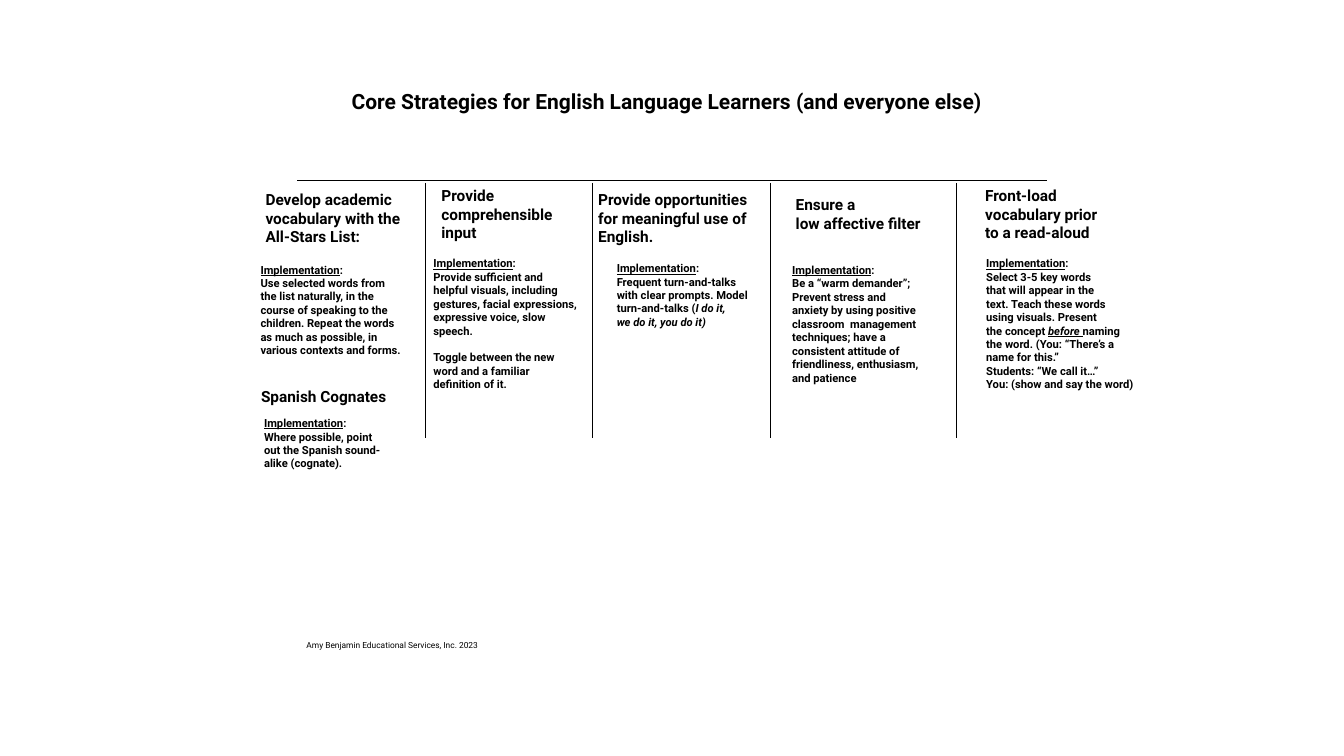
"""Build a one-page overview of core strategies for English language learners."""
from dataclasses import dataclass

from lxml import etree
from pptx import Presentation
from pptx.dml.color import RGBColor
from pptx.enum import shapes, text
from pptx.oxml import ns
from pptx.util import Inches, Pt


@dataclass(frozen=True)
class Theme:
    font: str = "Roboto"
    ink: RGBColor = RGBColor(0, 0, 0)
    title: int = 30
    heading: int = 22
    body: int = 16
    footer: int = 12
    passage_gap: int = 19
    rule: int = 1


theme = Theme()
LEFT, CENTER = text.PP_ALIGN.LEFT, text.PP_ALIGN.CENTER


def fill_box(box, passages, size, bold=True, align=LEFT):
    frame = box.text_frame
    frame.word_wrap = False
    frame.auto_size = text.MSO_AUTO_SIZE.SHAPE_TO_FIT_TEXT
    frame.vertical_anchor = text.MSO_ANCHOR.MIDDLE
    frame.margin_left = frame.margin_right = Inches(0.06)
    frame.margin_top = frame.margin_bottom = Inches(0.06)
    para = frame.paragraphs[0]
    for passage_number, passage in enumerate(passages):
        for line_number, line in enumerate(passage):
            if passage_number or line_number:
                para = frame.add_paragraph()
            para.alignment = align
            para.space_before = Pt(theme.passage_gap if passage_number and not line_number else 0)
            para.font.name = theme.font
            para.font.size = Pt(size)
            para.font.bold = bold
            para.font.color.rgb = theme.ink
            for words, style in [(line, "")] if isinstance(line, str) else line:
                span = para.add_run()
                span.text = words
                if "i" in style:
                    span.font.italic = True
                if "u" in style:
                    span.font.underline = True


def add_rule(page, x1, y1, x2, y2):
    rule = page.shapes.add_connector(
        shapes.MSO_CONNECTOR.STRAIGHT, Inches(x1), Inches(y1), Inches(x2), Inches(y2))
    rule.line.color.rgb = theme.ink
    rule.line.width = Pt(theme.rule)
    etree.SubElement(rule._element.spPr, ns.qn("a:effectLst"))


strategies = [
    ((5.21, 3.71, 2.98, 1.23),
     ["Develop academic", "vocabulary with the", "All-Stars List:"],
     (5.11, 5.17, 3.08, 1.96),
     [["Use selected words from", "the list naturally, in the", "course of speaking to the",
       "children. Repeat the words", "as much as possible, in", "various contexts and forms."]]),
    ((5.12, 7.62, 2.79, 0.48),
     ["Spanish Cognates"],
     (5.18, 8.21, 2.59, 1.17),
     [["Where possible, point", "out the Spanish sound-", "alike (cognate)."]]),
    ((8.7, 3.63, 2.47, 1.23),
     ["Provide", "comprehensible", "input"],
     (8.54, 5.05, 3.21, 2.75),
     [["Provide sufficient and", "helpful visuals, including", "gestures, facial expressions,",
       "expressive voice, slow", "speech."],
      ["Toggle between the new", "word and a familiar", "definition of it."]]),
    ((11.81, 3.71, 3.26, 1.23),
     ["Provide opportunities", "for meaningful use of", "English."],
     (12.18, 5.14, 2.9, 1.43),
     [["Frequent turn-and-talks", "with clear prompts. Model",
       [("turn-and-talks (", ""), ("I do it,", "i")], [("we do it, you do it)", "i")]]]),
    ((15.73, 3.81, 2.72, 0.86),
     ["Ensure a", "low affective filter"],
     (15.66, 5.18, 2.77, 2.49),
     [["Be a “warm demander”;", "Prevent stress and", "anxiety by using positive",
       "classroom  management", "techniques; have a", "consistent attitude of",
       "friendliness, enthusiasm,", "and patience"]]),
    ((19.49, 3.63, 2.5, 1.23),
     ["Front-load", "vocabulary prior", "to a read-aloud"],
     (19.51, 5.05, 3.22, 2.75),
     [["Select 3-5 key words", "that will appear in the", "text. Teach these words",
       "using visuals. Present",
       [("the concept ", ""), ("before ", "iu"), ("naming", "")],
       "the word. (You: “There’s a", "name for this.”", "Students: “We call it…”",
       "You: (show and say the word)"]]),
]

deck = Presentation()
deck.slide_width, deck.slide_height = Inches(26.67), Inches(15)
page = deck.slides.add_slide(deck.slide_layouts[5])

title = page.shapes.title
title.left, title.top, title.width, title.height = map(Inches, (6.53, 1.69, 13.4, 0.62))
fill_box(title, [["Core Strategies for English Language Learners (and everyone else)"]],
         theme.title, align=CENTER)

add_rule(page, 5.9, 3.57, 20.77, 3.57)
for x in (8.45, 11.76, 15.28, 18.97):
    add_rule(page, x, 3.63, x, 8.69)

label = [("Implementation", "u"), (":", "")]
for heading_place, heading, body_place, (opening, *others) in strategies:
    heading_box = page.shapes.add_textbox(*map(Inches, heading_place))
    fill_box(heading_box, [heading], theme.heading)
    body_box = page.shapes.add_textbox(*map(Inches, body_place))
    fill_box(body_box, [[label, *opening], *others], theme.body)

footer = page.shapes.add_textbox(*map(Inches, (5.94, 12.64, 3.69, 0.32)))
fill_box(footer, [["Amy Benjamin Educational Services, Inc. 2023"]],
         theme.footer, bold=False, align=CENTER)

deck.save("out.pptx")
